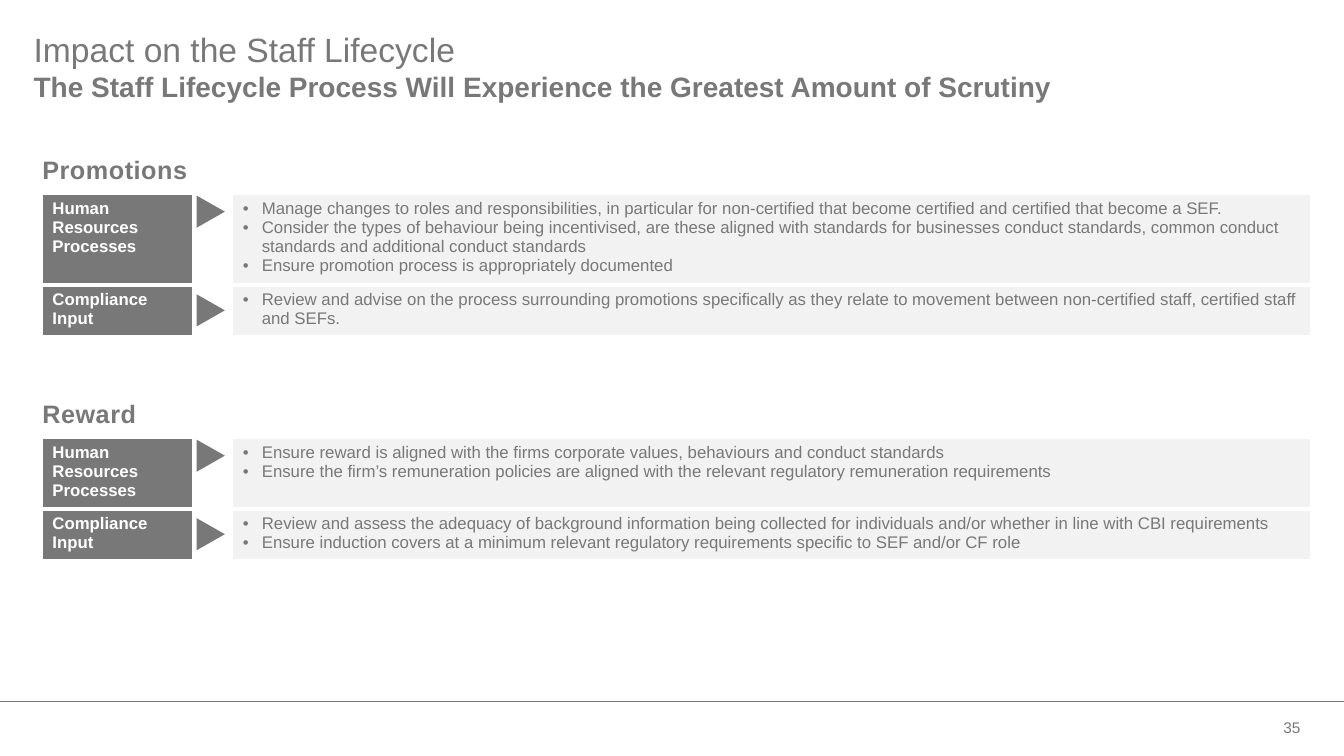
from lxml.etree import SubElement
from pptx import Presentation
from pptx.dml.color import RGBColor
from pptx.enum.shapes import MSO_CONNECTOR, MSO_SHAPE
from pptx.enum.text import MSO_ANCHOR, MSO_AUTO_SIZE, PP_ALIGN
from pptx.oxml.ns import qn
from pptx.util import Pt

TITLE = "Impact on the Staff Lifecycle"
SUBTITLE = "The Staff Lifecycle Process Will Experience the Greatest Amount of Scrutiny"
PAGE_NUMBER = "35"
SECTIONS = [
    {"heading": "Promotions", "top": 106.5, "rows": [
        ("Human Resources Processes", 64.8, [
            "Manage changes to roles and responsibilities, in particular for non-certified "
            "that become certified and certified that become a SEF.",
            "Consider the types of behaviour being incentivised, are these aligned with "
            "standards for businesses conduct standards, common conduct standards and "
            "additional conduct standards",
            "Ensure promotion process is appropriately documented"]),
        ("Compliance Input", 35.5, [
            "Review and advise on the process surrounding promotions specifically as they "
            "relate to movement between non-certified staff, certified staff and SEFs."])]},
    {"heading": "Reward", "top": 280.8, "rows": [
        ("Human Resources Processes", 50.4, [
            "Ensure reward is aligned with the firms corporate values, behaviours and "
            "conduct standards",
            "Ensure the firm’s remuneration policies are aligned with the relevant "
            "regulatory remuneration requirements"]),
        ("Compliance Input", 35.5, [
            "Review and assess the adequacy of background information being collected for "
            "individuals and/or whether in line with CBI requirements",
            "Ensure induction covers at a minimum relevant regulatory requirements specific "
            "to SEF and/or CF role"])]},
]
COLOURS = {"grey": "787878", "pale": "F2F2F2", "white": "FFFFFF"}
FONT = "Arial"
SLIDE_WIDTH, SLIDE_HEIGHT = 960, 540
TABLE_LEFT, TABLE_DROP = 30.24, 32.4
COLUMN_WIDTHS = [107.3, 28.8, 769.7]
ARROW_LEFT, ARROW_WIDTH, ARROW_HEIGHT = 139, 23, 20.2
ARROW_DROPS = [2.2, 7.9]
BULLET_INDENT = 13.5
THIN, THICK = 1, 3


def colour(name):
    return RGBColor.from_string(COLOURS[name])


def style_font(para, size, name="grey", bold=False):
    for span in para.runs:
        span.font.name = FONT
        span.font.size = Pt(size)
        span.font.bold = bold
        span.font.color.rgb = colour(name)


def set_margins(frame, left, top, right, bottom):
    frame.margin_left, frame.margin_top = Pt(left), Pt(top)
    frame.margin_right, frame.margin_bottom = Pt(right), Pt(bottom)


def fill_placeholder(box, text, place, size, bold):
    box.left, box.top, box.width, box.height = map(Pt, place)
    frame = box.text_frame
    frame.text = text
    frame.word_wrap = True
    frame.auto_size = MSO_AUTO_SIZE.NONE
    frame.vertical_anchor = MSO_ANCHOR.TOP
    set_margins(frame, 0, 0, 0, 5.76)
    para = frame.paragraphs[0]
    properties = para._p.get_or_add_pPr()
    properties.set("marL", "0")
    properties.set("indent", "0")
    para.alignment = PP_ALIGN.LEFT
    para.line_spacing = 0.9
    para.space_before = Pt(0)
    SubElement(properties, qn("a:buNone"))
    style_font(para, size, bold=bold)


def add_text(page, text, place, size, bold=False):
    box = page.shapes.add_textbox(*map(Pt, place))
    box.text_frame.text = text
    box.text_frame.word_wrap = True
    style_font(box.text_frame.paragraphs[0], size, bold=bold)
    return box.text_frame


def set_borders(cell, widths):
    """Draw white borders; widths run left, right, top, bottom."""
    properties = cell._tc.get_or_add_tcPr()
    for position, (side, width) in enumerate(zip(("lnL", "lnR", "lnT", "lnB"), widths)):
        line = SubElement(properties, qn(f"a:{side}"), w=str(Pt(width)))
        fill = SubElement(line, qn("a:solidFill"))
        SubElement(fill, qn("a:srgbClr"), val=COLOURS["white"])
        properties.insert(position, line)


def fill_cell(cell, lines, fill, text_colour, bold=False, bulleted=False):
    cell.fill.solid()
    cell.fill.fore_color.rgb = colour(fill)
    cell.text_frame.text = "\n".join(lines)
    for para in cell.text_frame.paragraphs:
        if bulleted:
            properties = para._p.get_or_add_pPr()
            properties.set("marL", str(Pt(BULLET_INDENT)))
            properties.set("indent", str(-Pt(BULLET_INDENT)))
            SubElement(properties, qn("a:buFont"), typeface=FONT)
            SubElement(properties, qn("a:buChar"), char="•")
        style_font(para, 12, text_colour, bold)


def add_arrow(page, top):
    arrow = page.shapes.add_shape(MSO_SHAPE.ISOSCELES_TRIANGLE, Pt(ARROW_LEFT), Pt(top),
                                  Pt(ARROW_WIDTH), Pt(ARROW_HEIGHT))
    arrow.rotation = 90
    arrow.shadow.inherit = False
    arrow.fill.solid()
    arrow.fill.fore_color.rgb = colour("grey")
    arrow.line.fill.background()


def add_section(page, section):
    heading = add_text(page, section["heading"],
                       (TABLE_LEFT, section["top"], 416.9, 28.8), 18, bold=True)
    set_margins(heading, 0, 3.6, 7.2, 3.6)
    heading.paragraphs[0].runs[0]._r.get_or_add_rPr().set("spc", "40")

    rows = section["rows"]
    top = section["top"] + TABLE_DROP
    table = page.shapes.add_table(
        len(rows), len(COLUMN_WIDTHS), Pt(TABLE_LEFT), Pt(top),
        Pt(sum(COLUMN_WIDTHS)), Pt(sum(height for _, height, _ in rows))).table
    table.first_row = table.horz_banding = False
    for column, width in zip(table.columns, COLUMN_WIDTHS):
        column.width = Pt(width)

    for index, (label, height, points) in enumerate(rows):
        table.rows[index].height = Pt(height)
        label_cell, gap_cell, points_cell = table.rows[index].cells
        fill_cell(label_cell, [label], "grey", "white", bold=True)
        gap_cell.fill.background()
        fill_cell(points_cell, points, "pale", "grey", bulleted=True)
        above = THICK if index > 0 else THIN
        below = THICK if index < len(rows) - 1 else THIN
        for cell in (label_cell, gap_cell, points_cell):
            set_borders(cell, (THIN, THIN, above, below))
        add_arrow(page, top + ARROW_DROPS[index])
        top += height


def main():
    deck = Presentation()
    deck.slide_width, deck.slide_height = Pt(SLIDE_WIDTH), Pt(SLIDE_HEIGHT)
    page = deck.slides.add_slide(deck.slide_layouts[1])
    fill_placeholder(page.shapes.title, TITLE, (24, 24, 693.4, 28), 24, False)
    fill_placeholder(page.placeholders[1], SUBTITLE, (24, 52.5, 800, 31.7), 20, True)

    rule = page.shapes.add_connector(MSO_CONNECTOR.STRAIGHT, Pt(0), Pt(501),
                                     Pt(SLIDE_WIDTH), Pt(501))
    rule.line.color.rgb = colour("grey")
    rule.line.width = Pt(0.5)
    SubElement(rule._element.spPr, qn("a:effectLst"))

    number = add_text(page, PAGE_NUMBER, (883.4, 509, 52.6, 21.6), 11)
    number.vertical_anchor = MSO_ANCHOR.MIDDLE
    number.paragraphs[0].alignment = PP_ALIGN.RIGHT

    for section in SECTIONS:
        add_section(page, section)
    deck.save("out.pptx")


if __name__ == "__main__":
    main()
